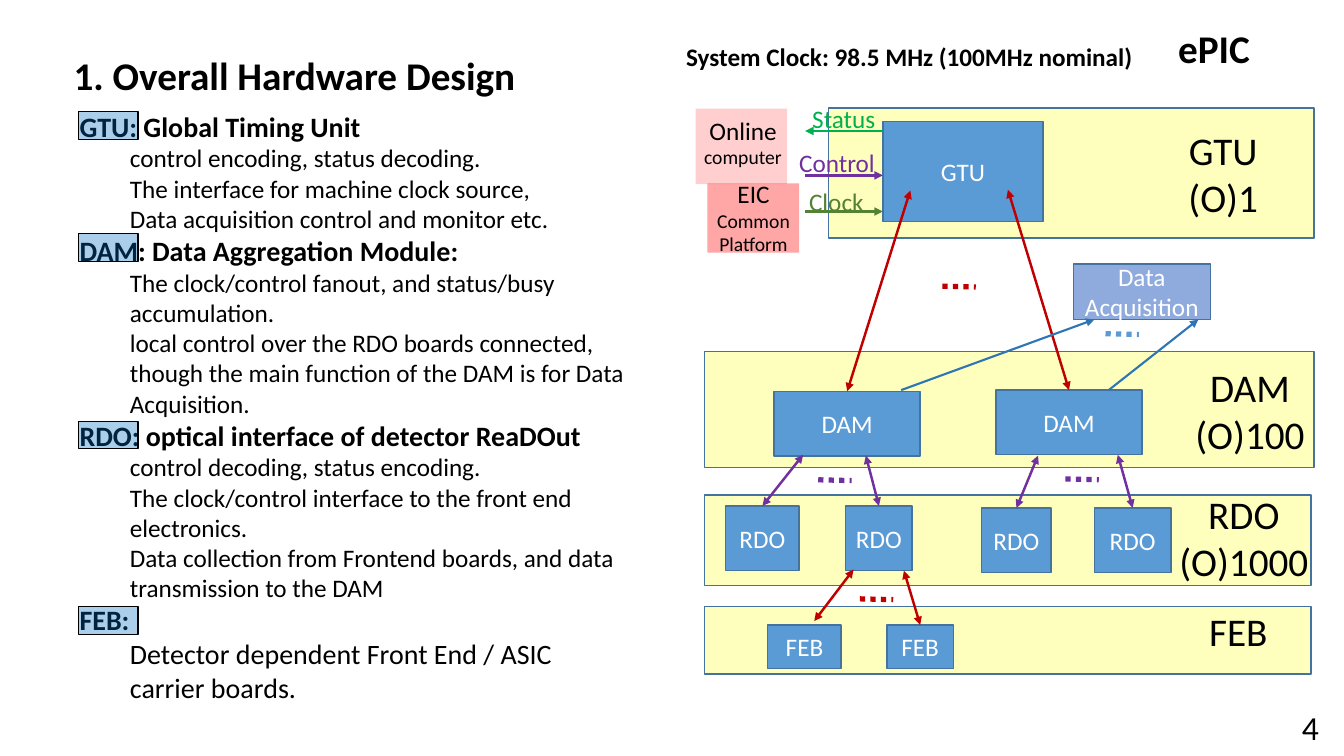
from lxml.etree import SubElement
from pptx import Presentation
from pptx.dml.color import RGBColor
from pptx.enum.dml import MSO_LINE
from pptx.enum.shapes import MSO_CONNECTOR, MSO_SHAPE
from pptx.enum.text import MSO_ANCHOR, MSO_AUTO_SIZE, PP_ALIGN
from pptx.oxml.ns import qn
from pptx.util import Cm, Pt

COLORS = {
    "black": "000000", "white": "FFFFFF", "yellow": "FFFF00", "red": "FF0000",
    "box": "5B9BD5", "edge": "43739E", "daq": "8FAADC", "mark": "0070C0",
    "link": "C00000", "purple": "7030A0", "green": "00B050", "olive": "548235",
    "data": "2E75B6",
}
LEFT, CENTER = PP_ALIGN.LEFT, PP_ALIGN.CENTER


def rgb(name):
    return RGBColor.from_string(COLORS[name])


class Deck:
    font = "Calibri"

    def __init__(self, width, height):
        self.prs = Presentation()
        self.prs.slide_width, self.prs.slide_height = Cm(width), Cm(height)

    def add_slide(self):
        self.s = self.prs.slides.add_slide(self.prs.slide_layouts[1])

    def run(self, p, text, size, color="black", bold=False):
        r = p.add_run()
        r.text = text
        r.font.name, r.font.size, r.font.bold = self.font, Pt(size), bold
        r.font.color.rgb = rgb(color)

    def place(self, sp, box):
        sp.left, sp.top, sp.width, sp.height = map(Cm, box)

    def title(self, box, text):
        sp = self.s.shapes.title
        self.place(sp, box)
        tf = sp.text_frame
        tf.word_wrap, tf.auto_size = False, MSO_AUTO_SIZE.NONE
        tf.vertical_anchor = MSO_ANCHOR.TOP
        p = tf.paragraphs[0]
        p.alignment = LEFT
        self.run(p, text, 28, bold=True)

    def body(self, box, sections):
        sp = self.s.placeholders[1]
        self.place(sp, box)
        tf = sp.text_frame
        tf.auto_size = MSO_AUTO_SIZE.NONE
        p = tf.paragraphs[0]
        for heading, size, items in sections:
            for i, text in enumerate([heading] + items):
                if p.runs:
                    p = tf.add_paragraph()
                p.level = min(i, 1)
                p.space_before = Pt(0)
                pPr = p._p.get_or_add_pPr()
                pPr.set("marL", str(Cm(1.27) * p.level))
                pPr.set("indent", "0")
                SubElement(pPr, qn("a:buNone"))
                self.run(p, text, size if i else 20, bold=i == 0)

    def text(self, box, lines, color="black", bold=False, align=CENTER, wrap=False):
        sp = self.s.shapes.add_textbox(*map(Cm, box))
        tf = sp.text_frame
        tf.word_wrap = wrap
        for i, (text, size) in enumerate(lines):
            p = tf.add_paragraph() if i else tf.paragraphs[0]
            p.alignment = align
            self.run(p, text, size, color, bold)

    def rect(self, box, fill, alpha=100, edge="edge", weight=1, label=""):
        sp = self.s.shapes.add_shape(MSO_SHAPE.RECTANGLE, *map(Cm, box))
        sp.shadow.inherit = False
        sp.fill.solid()
        sp.fill.fore_color.rgb = rgb(fill)
        if alpha < 100:
            clr = sp._element.xpath("./p:spPr/a:solidFill/a:srgbClr")[0]
            SubElement(clr, qn("a:alpha")).set("val", str(alpha * 1000))
        if edge:
            sp.line.color.rgb = rgb(edge)
            sp.line.width = Pt(weight)
        else:
            sp.line.fill.background()
        if label:
            tf = sp.text_frame
            tf.word_wrap = True
            tf.vertical_anchor = MSO_ANCHOR.MIDDLE
            p = tf.paragraphs[0]
            p.alignment = CENTER
            self.run(p, label, 18, "white")
        return sp

    def line(self, start, end, color, weight, ends=(), dash=None, top_of=None):
        c = self.s.shapes.add_connector(MSO_CONNECTOR.STRAIGHT, *map(Cm, start + end))
        if top_of is not None:
            c.end_connect(top_of, 0)
        c.line.color.rgb = rgb(color)
        c.line.width = Pt(weight)
        if dash:
            c.line.dash_style = dash
        ln = c.line._get_or_add_ln()
        for end_name in ends:
            SubElement(ln, qn(f"a:{end_name}End")).set("type", "triangle")
        SubElement(c._element.spPr, qn("a:effectLst"))


def main():
    d = Deck(33.87, 19.05)
    d.add_slide()
    d.title((1.6, 1.17, 11.79, 1.45), "1. Overall Hardware Design")
    d.body((1.75, 2.62, 14.3, 15.39), [
        ("GTU: Global Timing Unit", 18, [
            "control encoding, status decoding.",
            "The interface for machine clock source,",
            "Data acquisition control and monitor etc."]),
        ("DAM: Data Aggregation Module:", 18, [
            "The clock/control fanout, and status/busy accumulation.",
            "local control over the RDO boards connected, though the main "
            "function of the DAM is for Data Acquisition."]),
        ("RDO: optical interface of detector ReaDOut", 18, [
            "control decoding, status encoding.",
            "The clock/control interface to the front end electronics.",
            "Data collection from Frontend boards, and data transmission to the DAM"]),
        ("FEB:", 20, ["Detector dependent Front End / ASIC carrier boards."]),
    ])
    for top in (2.82, 5.89, 10.62, 15.29):
        d.rect((1.98, top, 1.5, 0.69), "mark", 33, "black", 0.75)

    d.text((17.04, 0.91, 11.91, 1.02),
           [("System Clock: 98.5 MHz (100MHz nominal)", 18)], bold=True, align=LEFT)
    d.text((29.44, 0.48, 2.34, 1.45), [("ePIC", 28)], bold=True, align=LEFT)

    bands = [
        ((20.88, 2.72, 12.24, 3.28), (29.44, 3.05, 2.77, 2.64), ["GTU", "(O)1"]),
        ((17.75, 8.86, 15.37, 2.92), (29.85, 9.04, 3.3, 2.64), ["DAM", "(O)100"]),
        ((17.75, 12.47, 15.29, 2.29), (29.44, 12.22, 3.81, 2.64), ["RDO", "(O)1000"]),
        ((17.75, 15.29, 15.29, 1.7), (30.2, 15.19, 2.01, 1.45), ["FEB"]),
    ]
    for band, label_box, lines in bands:
        d.rect(band, "yellow", 26)
        d.text(label_box, [(text, 28) for text in lines])

    d.rect((17.83, 4.62, 2.31, 1.75), "red", 35, None)
    d.rect((17.53, 2.74, 2.31, 1.9), "red", 19, None)
    d.text((17.81, 4.37, 2.36, 2.24), [("EIC", 18), ("Common", 14), ("Platform", 14)])
    d.text((17.48, 2.77, 2.49, 1.63), [("Online", 18), ("computer", 14)], wrap=True)

    d.rect((22.25, 3.07, 4.04, 2.51), "box", label="GTU")
    dams = [d.rect((x, y, 3.68, 1.63), "box", label="DAM")
            for x, y in ((19.51, 9.86), (25.1, 9.83))]
    rdos = [d.rect((x, y, w, 1.63), "box", label="RDO")
            for x, y, w in ((18.29, 12.75, 1.85), (21.31, 12.75, 1.68),
                            (24.74, 12.8, 1.75), (27.58, 12.8, 1.93))]
    febs = [d.rect((x, 15.75, w, 1.09), "box", label="FEB")
            for x, w in ((19.35, 1.85), (22.35, 1.68))]
    d.rect((27.05, 6.65, 3.45, 1.4), "daq", label="Data Acquisition")

    signals = [
        ("Status", "green", 3.3, "head", (20.22, 2.49, 2.11, 1.02)),
        ("Control", "purple", 4.42, "tail", (19.89, 3.58, 2.44, 1.02)),
        ("Clock", "olive", 5.33, "tail", (20.14, 4.57, 1.91, 1.02)),
    ]
    for name, color, y, arrow, box in signals:
        d.line((20.29, y), (22.25, y), color, 2, [arrow])
        d.text(box, [(name, 18)], color, align=LEFT)

    both = ("head", "tail")
    links = [
        ((22.94, 4.8), dams[0], "link"), ((25.4, 4.78), dams[1], "link"),
        ((20.24, 11.46), rdos[0], "purple"), ((21.82, 11.48), rdos[1], "purple"),
        ((26.16, 11.48), rdos[2], "purple"), ((28.17, 11.46), rdos[3], "purple"),
        ((22.78, 14.38), febs[1], "link"),
    ]
    for start, board, color in links:
        d.line(start, start, color, 1.75, both, top_of=board)
    d.line((21.51, 14.35), (20.52, 15.65), "link", 1.75, both)
    for start, end in (((30.2, 8.05), (27.94, 9.83)), ((27.58, 8.05), (22.71, 9.83))):
        d.line(start, end, "data", 1.5, ["head"])

    dots = [(27.86, 8.41, "box"), (23.75, 7.21, "link"), (20.62, 12.09, "purple"),
            (26.85, 12.07, "purple"), (21.67, 15.09, "link")]
    for x, y, color in dots:
        d.line((x, y), (x + 0.84, y + 0.02), color, 3.75, dash=MSO_LINE.ROUND_DOT)

    d.text((32.56, 17.68, 0.94, 1.27), [("4", 24)], align=LEFT)
    d.prs.save("out.pptx")


if __name__ == "__main__":
    main()
